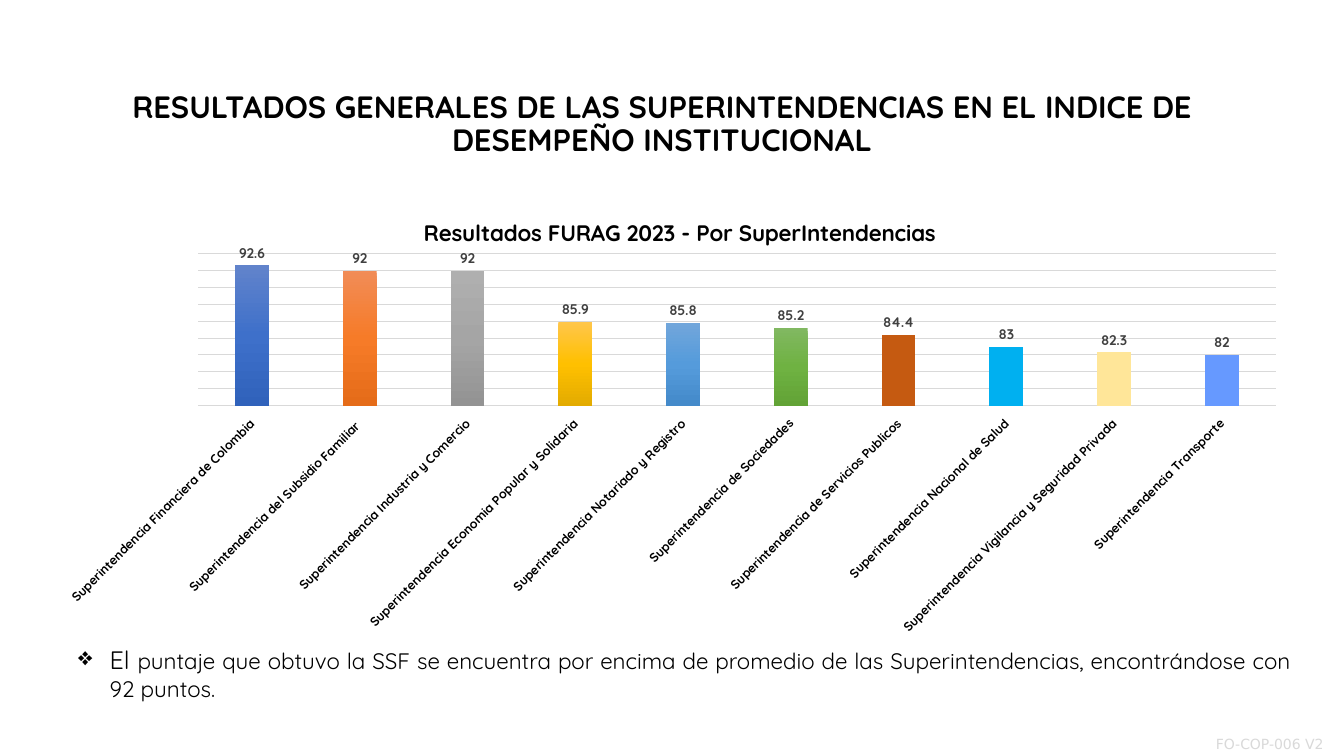
from copy import deepcopy
from dataclasses import dataclass

from lxml.etree import SubElement as Sub
from pptx import Presentation
from pptx.chart.data import CategoryChartData as Data
from pptx.dml.color import RGBColor as RGB
from pptx.enum.chart import XL_CHART_TYPE as Kind
from pptx.enum.chart import XL_LABEL_POSITION as Spot
from pptx.enum.chart import XL_TICK_LABEL_POSITION as Place
from pptx.enum.chart import XL_TICK_MARK as Tick
from pptx.enum.text import MSO_ANCHOR as Anchor
from pptx.enum.text import PP_ALIGN as Align
from pptx.oxml.ns import qn
from pptx.util import Pt

SCALE = 9525  # EMU in one px, 96 px to the inch
FACE = "Quicksand"
BLACK = RGB(0, 0, 0)
WHITE = RGB(255, 255, 255)
DARK = RGB(0x40, 0x40, 0x40)
PALE = RGB(0xD9, 0xD9, 0xD9)


@dataclass
class Box:
    left: int
    top: int
    width: int
    height: int

    def emu(self) -> list[int]:
        return [n * SCALE for n in (self.left, self.top, self.width, self.height)]


@dataclass
class Bar:
    name: str
    score: float
    tones: str  # one colour, or three from top to bottom


BARS = [
    Bar("Superintendencia Financiera de Colombia", 92.6, "6183CB 3E70CA 3062BB"),
    Bar("Superintendencia del Subsidio Familiar ", 92, "F18C57 F67B28 E56C19"),
    Bar("Superintendencia Industria y Comercio", 92, "AFAFAF A5A5A5 939393"),
    Bar("Superintendencia Economia Popular y Solidaria", 85.9, "FFC64B FFC000 E3AB00"),
    Bar("Superintendencia Notariado y Registro", 85.8, "71A6DB 559BDB 448ACA"),
    Bar("Superintendencia de Sociedades", 85.2, "81B861 6FB242 62A336"),
    Bar("Superintendencia de Servicios Publicos", 84.4, "C55A11"),
    Bar("Superintendencia Nacional de Salud", 83, "00B0F0"),
    Bar("Superintendencia Vigilancia y Seguridad Privada", 82.3, "FFE699"),
    Bar("Superintendencia Transporte", 82, "6699FF"),
]


def style(font, size: int, tint: RGB = BLACK, bold: bool = False, face: str = FACE) -> None:
    font.name, font.size, font.bold = face, Pt(size), bold
    font.color.rgb = tint


def add_run(para, text: str, size: int, **look) -> None:
    run = para.add_run()
    run.text = text
    style(run.font, size, **look)


def add_para(slide, box: Box, align: Align):
    frame = slide.shapes.add_textbox(*box.emu()).text_frame
    frame.word_wrap = True
    para = frame.paragraphs[0]
    para.alignment = align
    return para


def set_place(node, index: int, **parts: float) -> None:
    """Put a manual layout, in fractions of the chart, on a title or plot."""
    for old in node.findall(qn("c:layout")):
        node.remove(old)
    layout = node.makeelement(qn("c:layout"), {})
    node.insert(index, layout)
    manual = Sub(layout, qn("c:manualLayout"))
    if "w" in parts:
        Sub(manual, qn("c:layoutTarget"), val="inner")
    for side in "xy":
        Sub(manual, qn(f"c:{side}Mode"), val="edge")
    for key, value in parts.items():
        Sub(manual, qn(f"c:{key}"), val=str(value))


def paint(fill, tones: str) -> None:
    tints = [RGB.from_string(tone) for tone in tones.split()]
    if len(tints) == 1:
        fill.solid()
        fill.fore_color.rgb = tints[0]
        return
    fill.gradient()
    fill.gradient_angle = 270
    stops = fill._xPr.find(".//" + qn("a:gsLst"))
    stops.insert(1, deepcopy(stops[0]))
    for step, (stop, tint) in enumerate(zip(fill.gradient_stops, tints)):
        stop.position = step / 2
        stop.color.rgb = tint


def add_bars(slide, box: Box) -> None:
    data = Data()
    data.categories = [bar.name for bar in BARS]
    data.add_series("Series 1", [bar.score for bar in BARS])
    chart = slide.shapes.add_chart(Kind.COLUMN_CLUSTERED, *box.emu(), data).chart
    style(chart.font, 8)
    chart.has_legend = False

    # Title and plot area
    title = chart.chart_title
    add_run(title.text_frame.paragraphs[0],
            "Resultados FURAG 2023 - Por SuperIntendencias", 16, bold=True)
    set_place(title._element, 1, x=0.3, y=0.05)
    area = chart._chartSpace.find(".//" + qn("c:plotArea"))
    set_place(area, 0, x=0.124, y=0.142, w=0.856, h=0.339)

    # Axes
    names, scores = chart.category_axis, chart.value_axis
    names.major_tick_mark = names.minor_tick_mark = Tick.NONE
    names.tick_label_position = Place.LOW
    style(names.tick_labels.font, 9, bold=True)
    names._element.find(".//" + qn("a:bodyPr")).set("rot", "-2700000")
    scores.minimum_scale, scores.maximum_scale, scores.major_unit = 76, 94, 2
    scores.has_major_gridlines = True
    scores.visible = False
    for line in (names.format.line, scores.major_gridlines.format.line):
        line.color.rgb = PALE
        line.width = Pt(0.75)

    # Columns and their labels
    plot = chart.plots[0]
    plot.gap_width, plot.overlap, plot.vary_by_categories = 219, -27, False
    series = plot.series[0]
    series.invert_if_negative = False
    for index, bar in enumerate(BARS):
        paint(series.points[index].format.fill, bar.tones)
    labels = series.data_labels
    labels.show_value = True
    labels.position = Spot.OUTSIDE_END
    style(labels.font, 10, DARK, True)


def add_code(slide, box: Box) -> None:
    table = slide.shapes.add_table(1, 1, *box.emu()).table
    table.first_row = table.horz_banding = False
    cell = table.cell(0, 0)
    cell.fill.solid()
    cell.fill.fore_color.rgb = WHITE
    cell.margin_left = cell.margin_right = cell.margin_top = SCALE
    cell.margin_bottom = 3 * SCALE
    cell.vertical_anchor = Anchor.BOTTOM
    add_run(cell.text_frame.paragraphs[0], "FO-COP-006 V2", 10,
            tint=PALE, face="DejaVu Sans")


def main() -> None:
    deck = Presentation()
    deck.slide_width, deck.slide_height = 1280 * SCALE, 720 * SCALE
    slide = deck.slides.add_slide(deck.slide_layouts[6])

    # Heading
    head = add_para(slide, Box(65, 83, 1131, 609), Align.CENTER)
    head.line_spacing = 0.9
    add_run(head, "RESULTADOS GENERALES DE LAS SUPERINTENDENCIAS EN EL INDICE DE "
            "DESEMPEÑO INSTITUCIONAL", 22, bold=True)

    # Form code and chart
    add_code(slide, Box(1157, 691, 123, 29))
    add_bars(slide, Box(40, 181, 1199, 427))

    # Bulleted remark
    note = add_para(slide, Box(65, 609, 1174, 94), Align.JUSTIFY)
    props = note._p.get_or_add_pPr()
    props.set("marL", str(30 * SCALE))
    props.set("indent", str(-30 * SCALE))
    Sub(props, qn("a:buChar"), char="❖")
    add_run(note, "El ", 18)
    add_run(note, "puntaje que obtuvo la SSF se encuentra por encima de promedio de las "
            "Superintendencias, encontrándose con 92 puntos.", 16)

    deck.save("out.pptx")


if __name__ == "__main__":
    main()
